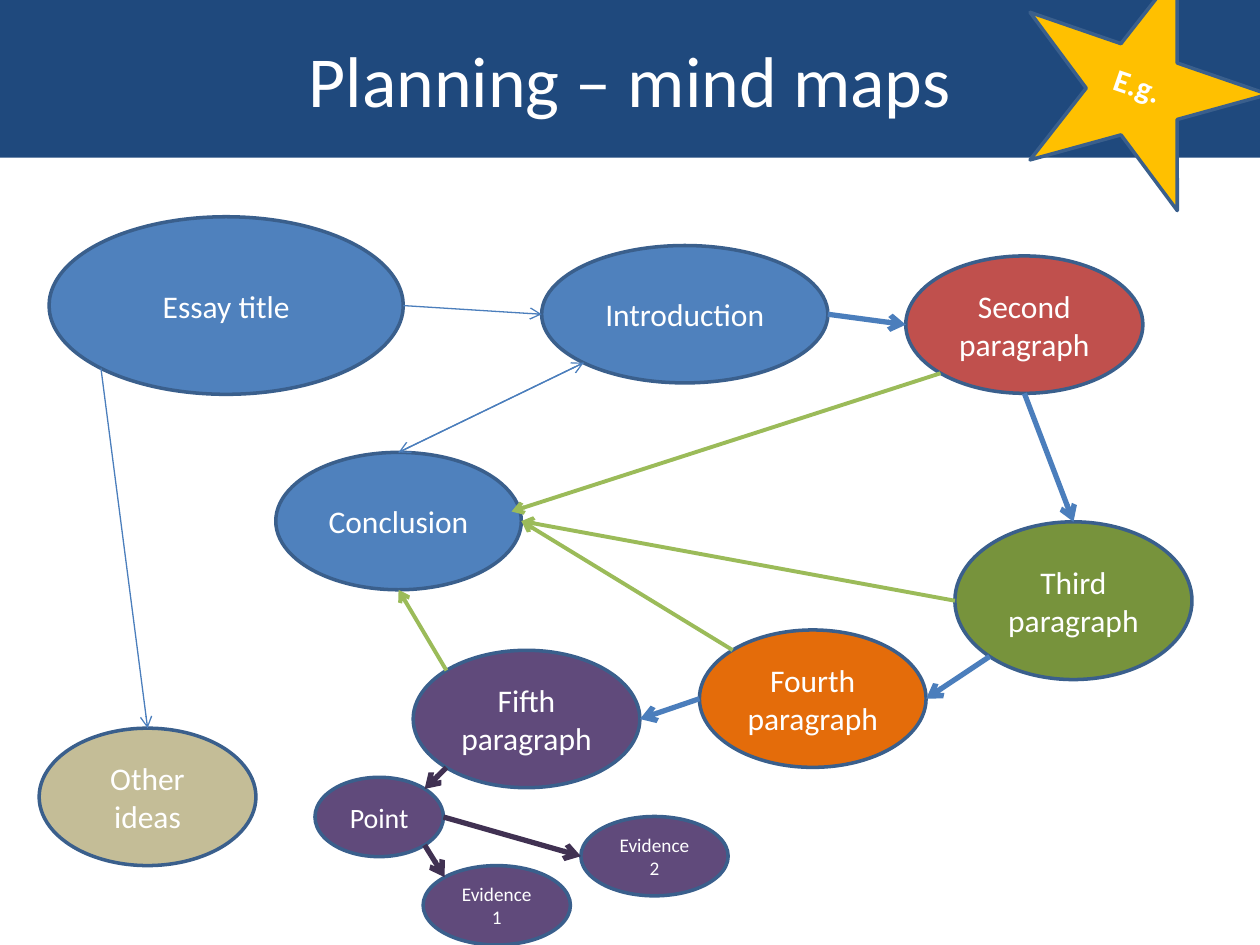
"""Build a one-slide mind map that shows how to plan an essay."""
from math import sqrt

from pptx import Presentation
from pptx.dml.color import RGBColor
from pptx.enum.shapes import MSO_CONNECTOR, MSO_SHAPE
from pptx.enum.text import MSO_ANCHOR, MSO_AUTO_SIZE, PP_ALIGN
from pptx.oxml.ns import qn
from pptx.util import Cm, Pt
from lxml.etree import SubElement

THEME = {
    "font": "Calibri", "title": 41, "body": 18, "point": 16, "evidence": 11,
    "white": "FFFFFF", "navy": "1F497D", "gold": "FFC000", "outline": "3A5F8C",
    "blue": "4F81BD", "red": "C0504D", "green": "77933C", "orange": "E46C0A",
    "purple": "604A7B", "tan": "C4BD97", "link": "4B7EBC", "lime": "9BBB59",
    "plum": "403152", "border": 2,
}

TITLE = "Planning – mind maps"
TITLE_BOX = (0, 0, 25.4, 3.18)
BADGE = "E.g."
STAR_BOX = (20.45, -0.69, 5.08, 4.55)
BADGE_BOX = (22.2, 1.19, 1.47, 1.04)
BADGE_TILT = 19

NODES = {
    "essay": ("Essay title", (0.99, 4.37, 7.14, 3.58), "blue", "body"),
    "fourth": ("Fourth paragraph", (14.1, 12.7, 4.57, 2.77), "orange", "body"),
    "second": ("Second\vparagraph", (18.26, 5.16, 4.78, 2.77), "red", "body"),
    "third": ("Third paragraph", (19.25, 10.52, 4.78, 3.18), "green", "body"),
    "other": ("Other ideas", (0.79, 14.68, 4.37, 2.77), "tan", "body"),
    "conclusion": ("Conclusion", (5.56, 9.12, 4.95, 2.77), "blue", "body"),
    "intro": ("Introduction", (10.92, 4.95, 5.77, 2.77), "blue", "body"),
    "point": ("Point", (6.35, 15.67, 2.59, 1.6), "purple", "point"),
    "fifth": ("Fifth paragraph", (8.33, 13.11, 4.57, 2.77), "purple", "body"),
    "evidence1": ("Evidence\v1", (8.53, 17.45, 2.97, 1.6), "purple", "evidence"),
    "evidence2": ("Evidence\v2", (11.71, 16.46, 2.97, 1.6), "purple", "evidence"),
}

LINKS = [
    ("link", 0.75, [
        ("essay", "E", "intro", "W"),
        ("essay", "SW", "other", "N"),
        ("conclusion", "N", "intro", "SW"),
        ("intro", "SW", "conclusion", "N"),
    ]),
    ("link", 3, [
        ("intro", "E", "second", "W"),
        ("second", "S", "third", "N"),
        ("third", "SW", "fourth", "E"),
        ("fourth", "W", "fifth", "E"),
    ]),
    ("lime", 2.25, [
        ("fifth", "NW", "conclusion", "S"),
        ("second", "SW", "conclusion", "inner E"),
        ("third", "W", "conclusion", "E"),
        ("fourth", "NW", "conclusion", "E"),
    ]),
    ("plum", 3, [
        ("fifth", "SW", "point", "NE"),
        ("point", "SE", "evidence1", "NW"),
        ("point", "E", "evidence2", "W"),
    ]),
]

D = sqrt(0.5)
SITES = {
    "N": (0, -1), "E": (1, 0), "S": (0, 1), "W": (-1, 0),
    "NE": (D, -D), "SE": (D, D), "SW": (-D, D), "NW": (-D, -D),
    "inner E": (0.92, -0.14),
}


def color(name):
    return RGBColor.from_string(THEME[name])


def cm(values):
    return [Cm(v) for v in values]


def paint(sp, fill):
    sp.fill.solid()
    sp.fill.fore_color.rgb = color(fill)


def write(sp, text, size, align=PP_ALIGN.CENTER, bold=False):
    tf = sp.text_frame
    tf.text = text
    tf.word_wrap = True
    tf.vertical_anchor = MSO_ANCHOR.MIDDLE
    p = tf.paragraphs[0]
    p.alignment = align
    p.font.name = THEME["font"]
    p.font.size = Pt(THEME[size])
    p.font.bold = bold
    p.font.color.rgb = color("white")


def add_outlined(shapes, kind, box, fill):
    sp = shapes.add_shape(kind, *cm(box))
    sp.shadow.inherit = False
    paint(sp, fill)
    sp.line.color.rgb = color("outline")
    sp.line.width = Pt(THEME["border"])
    return sp


def add_title(s):
    sp = s.shapes.title
    sp.left, sp.top, sp.width, sp.height = cm(TITLE_BOX)
    paint(sp, "navy")
    write(sp, TITLE, "title")
    sp.text_frame.auto_size = MSO_AUTO_SIZE.NONE


def add_badge(s):
    group = s.shapes.add_group_shape()
    star = add_outlined(group.shapes, MSO_SHAPE.STAR_5_POINT, STAR_BOX, "gold")
    label = group.shapes.add_textbox(*cm(BADGE_BOX))
    paint(label, "gold")
    write(label, BADGE, "body", PP_ALIGN.RIGHT, True)
    label.text_frame.word_wrap = False
    star.rotation = label.rotation = BADGE_TILT


def site_point(node, site):
    left, top, width, height = NODES[node][1]
    dx, dy = SITES[site]
    return cm((left + width / 2 * (1 + dx), top + height / 2 * (1 + dy)))


def add_link(s, start, end, line_color, width):
    cxn = s.shapes.add_connector(MSO_CONNECTOR.STRAIGHT, *start, *end)
    cxn.line.color.rgb = color(line_color)
    cxn.line.width = Pt(width)
    SubElement(cxn.line._get_or_add_ln(), qn("a:tailEnd"), type="arrow")
    SubElement(cxn._element.spPr, qn("a:effectLst"))


def main():
    prs = Presentation()
    prs.slide_width, prs.slide_height = Cm(25.4), Cm(19.05)
    s = prs.slides.add_slide(prs.slide_layouts[5])
    add_title(s)
    add_badge(s)
    for text, box, fill, size in NODES.values():
        write(add_outlined(s.shapes, MSO_SHAPE.OVAL, box, fill), text, size)
    for line_color, width, pairs in LINKS:
        for a, a_site, b, b_site in pairs:
            add_link(s, site_point(a, a_site), site_point(b, b_site), line_color, width)
    prs.save("out.pptx")


if __name__ == "__main__":
    main()
